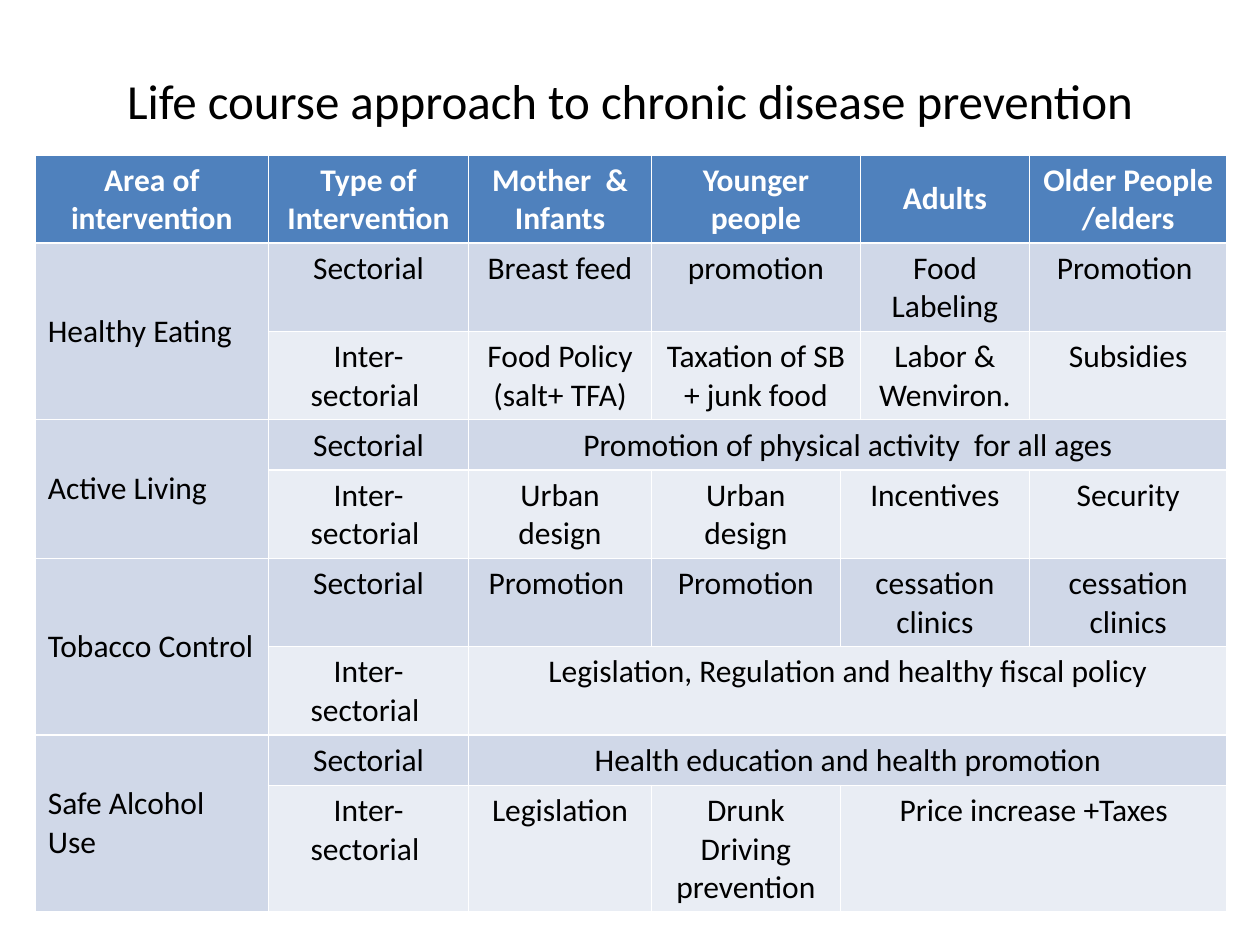
from dataclasses import dataclass

from pptx import Presentation
from pptx import util as u
from pptx.dml import color
from pptx.enum import text


@dataclass(frozen=True)
class Theme:
    font: str = "Calibri"
    title: int = 28
    body: int = 18
    lead: int = 38
    ink: str = "000000"
    white: str = "FFFFFF"
    head: str = "4F81BD"
    dark: str = "D0D8E8"
    light: str = "E9EDF4"


THEME = Theme()
COLS = [1.85, 1.59, 1.45, 1.5, 0.16, 1.34, 1.57]
HEAD_ROW, BODY_ROW = 0.6, 0.35

# Each entry is (text, columns spanned)
HEAD = [("Area of intervention", 1), ("Type of Intervention", 1),
        ("Mother  & Infants", 1), ("Younger people", 2), ("Adults", 1),
        ("Older People /elders", 1)]

# Each area has a sectorial row and an inter-sectorial row
AREAS = [
    ("Healthy Eating",
     [("Breast feed", 1), ("promotion", 2), ("Food Labeling", 1),
      ("Promotion ", 1)],
     [("Food Policy\n(salt+ TFA)", 1), ("Taxation of SB + junk food", 2),
      ("Labor & Wenviron.", 1), ("Subsidies", 1)]),
    ("Active Living",
     [("Promotion of physical activity  for all ages", 5)],
     [("Urban design", 1), ("Urban design", 1), ("Incentives", 2),
      ("Security", 1)]),
    ("Tobacco Control",
     [("Promotion ", 1), ("Promotion", 1), ("cessation clinics", 2),
      ("cessation clinics", 1)],
     [("Legislation, Regulation and healthy fiscal policy", 5)]),
    ("Safe Alcohol Use",
     [("Health education and health promotion", 5)],
     [("Legislation", 1), ("Drunk Driving prevention", 1),
      ("Price increase +Taxes", 3)]),
]
TYPES = ["Sectorial", "Inter-sectorial "]


def write(frame, words, size, ink, align, bold=False):
    """Fill a text frame, one paragraph per line of words."""
    for i, line in enumerate(words.split("\n")):
        para = frame.add_paragraph() if i else frame.paragraphs[0]
        para.alignment = align
        run = para.add_run()
        run.text = line
        font = run.font
        font.name, font.size, font.bold = THEME.font, u.Pt(size), bold
        font.color.rgb = color.RGBColor.from_string(ink)


def add_title(slide, words):
    box = slide.shapes.add_textbox(u.Inches(0.5), u.Inches(0.3),
                                   u.Inches(9), u.Inches(0.93))
    frame = box.text_frame
    frame.word_wrap = True
    frame.vertical_anchor = text.MSO_ANCHOR.MIDDLE
    write(frame, words, THEME.title, THEME.ink, text.PP_ALIGN.CENTER)
    frame.paragraphs[0].line_spacing = u.Pt(THEME.lead)


def paint(cell, fill):
    cell.fill.solid()
    cell.fill.fore_color.rgb = color.RGBColor.from_string(fill)


def fill_row(grid, row, col, items, ink, bold=False, middle=False):
    """Place items from left to right, merging the columns they span."""
    for words, span in items:
        cell = grid.cell(row, col)
        if span > 1:
            cell.merge(grid.cell(row, col + span - 1))
        write(cell.text_frame, words, THEME.body, ink,
              text.PP_ALIGN.CENTER, bold)
        if middle:
            cell.vertical_anchor = text.MSO_ANCHOR.MIDDLE
        col += span


def add_grid(slide):
    count = 1 + len(AREAS) * len(TYPES)
    high = HEAD_ROW + BODY_ROW * (count - 1)
    grid = slide.shapes.add_table(count, len(COLS), u.Inches(0.28),
                                  u.Inches(1.23), u.Inches(sum(COLS)),
                                  u.Inches(high)).table
    # The table style gives the white rules; fills are set per cell
    grid.horz_banding = False
    for col, wide in zip(grid.columns, COLS):
        col.width = u.Inches(wide)
    for i, row in enumerate(grid.rows):
        row.height = u.Inches(BODY_ROW if i else HEAD_ROW)
        band = THEME.dark if i % 2 else THEME.light
        for j, cell in enumerate(row.cells):
            body = band if j else THEME.dark
            paint(cell, body if i else THEME.head)

    # Header
    fill_row(grid, 0, 0, HEAD, THEME.white, bold=True, middle=True)

    # Areas
    for i, (area, *plans) in enumerate(AREAS):
        top = 1 + i * len(TYPES)
        cell = grid.cell(top, 0)
        cell.merge(grid.cell(top + len(TYPES) - 1, 0))
        cell.vertical_anchor = text.MSO_ANCHOR.MIDDLE
        write(cell.text_frame, area, THEME.body, THEME.ink,
              text.PP_ALIGN.LEFT)
        for j, (kind, plan) in enumerate(zip(TYPES, plans)):
            fill_row(grid, top + j, 1, [(kind, 1)] + plan, THEME.ink)


def main():
    deck = Presentation()
    deck.slide_width, deck.slide_height = u.Inches(10), u.Inches(7.5)
    slide = deck.slides.add_slide(deck.slide_layouts[6])
    add_title(slide, "Life course approach to chronic disease prevention")
    add_grid(slide)
    deck.save("out.pptx")


if __name__ == "__main__":
    main()
